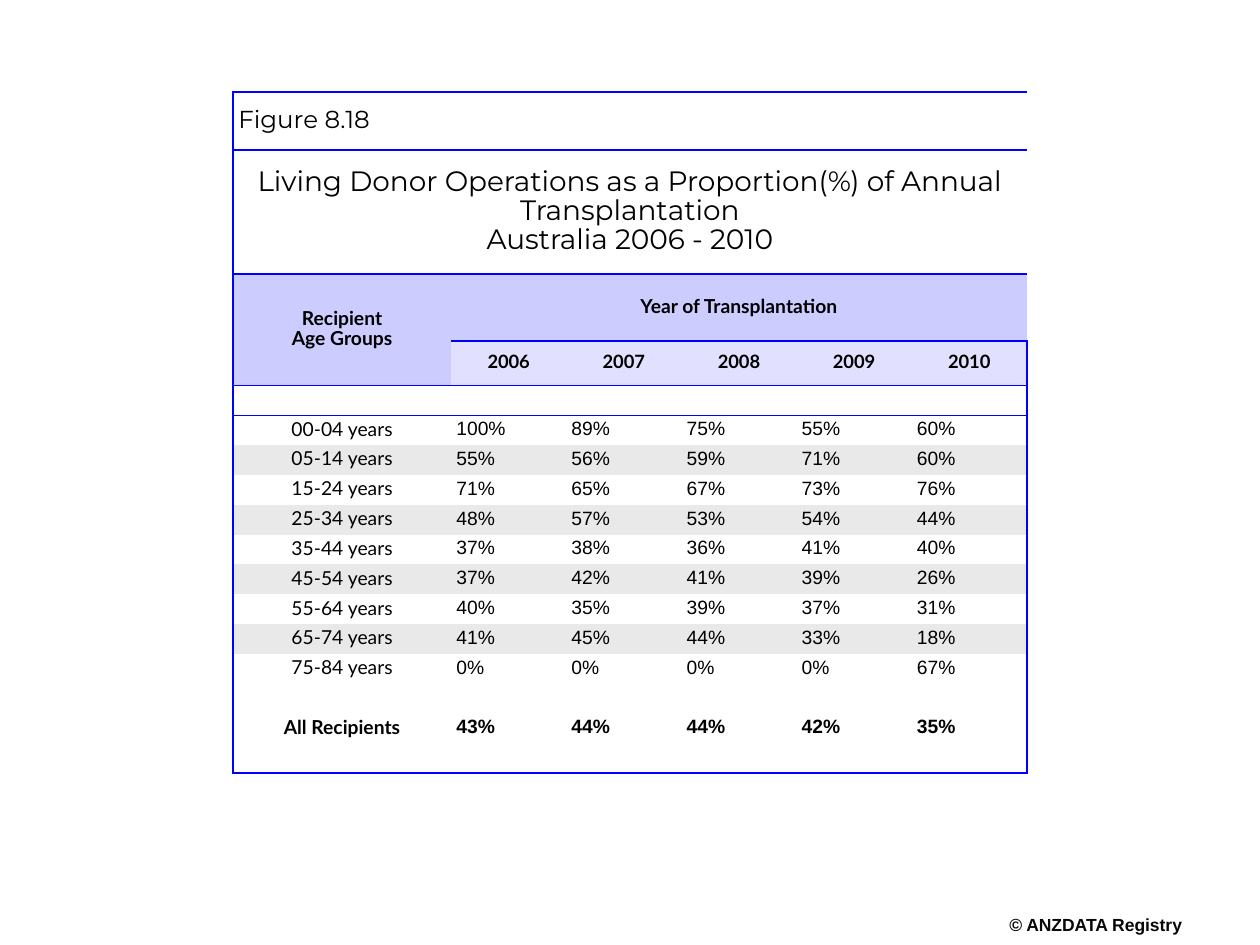
from dataclasses import dataclass

import pptx
import pptx.dml.color
import pptx.enum.text
import pptx.oxml.ns
import pptx.util
from lxml import etree

Pt = pptx.util.Pt
RGB = pptx.dml.color.RGBColor.from_string
qn = pptx.oxml.ns.qn
ALIGN = pptx.enum.text.PP_ALIGN
ANCHOR = pptx.enum.text.MSO_ANCHOR


@dataclass(frozen=True)
class Theme:
    ink: str = "000000"
    credit_ink: str = "080808"
    rule: str = "0000FF"
    header: str = "CCCCFF"
    years: str = "E1E1FF"
    stripe: str = "E9E9E9"
    title_font: str = "Montserrat"
    label_font: str = "Lato"
    value_font: str = "Arial"
    figure_size: float = 14
    title_size: float = 16
    body_size: float = 11
    year_size: float = 10.5
    credit_size: float = 10
    rule_width: float = 1
    line_spacing: float = 0.85


THEME = Theme()
NO_GRID_STYLE = "{2D5ABB26-0587-4C30-8999-92F81FD0307C}"
YEARS = ["2006", "2007", "2008", "2009", "2010"]
AGE_GROUPS = [
    ("00-04 years", [100, 89, 75, 55, 60]),
    ("05-14 years", [55, 56, 59, 71, 60]),
    ("15-24 years", [71, 65, 67, 73, 76]),
    ("25-34 years", [48, 57, 53, 54, 44]),
    ("35-44 years", [37, 38, 36, 41, 40]),
    ("45-54 years", [37, 42, 41, 39, 26]),
    ("55-64 years", [40, 35, 39, 37, 31]),
    ("65-74 years", [41, 45, 44, 33, 18]),
    ("75-84 years", [0, 0, 0, 0, 67]),
]
ALL_RECIPIENTS = ("All Recipients", [43, 44, 44, 42, 35])
HEADER_HEIGHTS = [33.2, 71, 38.2, 25.4]
FIRST_AGE_ROW = len(HEADER_HEIGHTS) + 1
TOTAL_ROW = FIRST_AGE_ROW + len(AGE_GROUPS) + 1
ROW_COUNT = TOTAL_ROW + 2


def write(frame, lines, font, size, bold=False, align=ALIGN.CENTER, after=0, ink=THEME.ink):
    for index, line in enumerate(lines):
        paragraph = frame.add_paragraph() if index else frame.paragraphs[0]
        paragraph.alignment = align
        paragraph.line_spacing = THEME.line_spacing
        paragraph.space_after = Pt(after)
        run = paragraph.add_run()
        run.text = line
        run.font.name = font
        run.font.size = Pt(size)
        run.font.bold = bold
        run.font.color.rgb = RGB(ink)


def draw_borders(cell, row, column):
    ruled = {
        "L": column == 0,
        "R": column == len(YEARS),
        "T": row <= len(HEADER_HEIGHTS) and (row, column) != (3, 0),
        "B": row < len(HEADER_HEIGHTS) or row == ROW_COUNT - 1,
    }
    properties = cell._tc.get_or_add_tcPr()
    for side, visible in ruled.items():
        if visible:
            line = etree.SubElement(properties, qn(f"a:ln{side}"), w=str(Pt(THEME.rule_width)))
            fill = etree.SubElement(line, qn("a:solidFill"))
            etree.SubElement(fill, qn("a:srgbClr"), val=THEME.rule)


def row_fill(row, column):
    if row == 2 or (row, column) == (3, 0):
        return THEME.header
    if row == 3:
        return THEME.years
    if FIRST_AGE_ROW <= row < TOTAL_ROW - 1 and (row - FIRST_AGE_ROW) % 2:
        return THEME.stripe
    return None


def format_cell(cell, row, column):
    cell.vertical_anchor = ANCHOR.MIDDLE
    cell.margin_left = cell.margin_right = Pt(3)
    cell.margin_top = cell.margin_bottom = Pt(3 if row < 2 else 1.5)
    draw_borders(cell, row, column)
    color = row_fill(row, column)
    if color:
        cell.fill.solid()
        cell.fill.fore_color.rgb = RGB(color)
    else:
        cell.fill.background()
    if not cell.text_frame.text:
        end = etree.SubElement(cell.text_frame.paragraphs[0]._p, qn("a:endParaRPr"))
        end.set("sz", str(THEME.body_size * 100))


def write_values(table, row, label, values, bold=False):
    write(table.cell(row, 0).text_frame, [label], THEME.label_font, THEME.body_size, bold)
    for column, value in enumerate(values, 1):
        write(table.cell(row, column).text_frame, [f"{value}%"], THEME.value_font,
              THEME.body_size, bold, ALIGN.LEFT, after=14)


def write_headers(table):
    last = len(YEARS)
    for start, end in [((0, 0), (0, last)), ((1, 0), (1, last)),
                       ((2, 0), (3, 0)), ((2, 1), (2, last))]:
        table.cell(*start).merge(table.cell(*end))
    write(table.cell(0, 0).text_frame, ["Figure 8.18"], THEME.title_font,
          THEME.figure_size, align=ALIGN.LEFT)
    write(table.cell(1, 0).text_frame,
          ["Living Donor Operations as a Proportion(%) of Annual Transplantation",
           "Australia 2006 - 2010"], THEME.title_font, THEME.title_size)
    write(table.cell(2, 0).text_frame, ["Recipient", "Age Groups"],
          THEME.label_font, THEME.body_size, True)
    write(table.cell(2, 1).text_frame, ["Year of Transplantation"],
          THEME.label_font, THEME.body_size, True)
    for column, year in enumerate(YEARS, 1):
        write(table.cell(3, column).text_frame, [year], THEME.label_font, THEME.year_size, True)


def add_donor_table(slide, left, top, width, height):
    table = slide.shapes.add_table(ROW_COUNT, len(YEARS) + 1, Pt(left), Pt(top),
                                   Pt(width), Pt(height)).table
    table.first_row = table.horz_banding = False
    table._tbl.tblPr.find(qn("a:tableStyleId")).text = NO_GRID_STYLE
    label_width = 124.6
    for index, column in enumerate(table.columns):
        column.width = Pt((width - label_width) / len(YEARS) if index else label_width)
    body_height = (height - sum(HEADER_HEIGHTS)) / (ROW_COUNT - len(HEADER_HEIGHTS))
    for index, row in enumerate(table.rows):
        row.height = Pt(HEADER_HEIGHTS[index] if index < len(HEADER_HEIGHTS) else body_height)

    write_headers(table)
    for row, (ages, values) in enumerate(AGE_GROUPS, FIRST_AGE_ROW):
        write_values(table, row, ages, values)
    write_values(table, TOTAL_ROW, *ALL_RECIPIENTS, bold=True)
    for row in range(ROW_COUNT):
        for column in range(len(YEARS) + 1):
            format_cell(table.cell(row, column), row, column)


def add_credit(slide, left, top, width, height):
    frame = slide.shapes.add_textbox(Pt(left), Pt(top), Pt(width), Pt(height)).text_frame
    frame.margin_left = frame.margin_right = frame.margin_top = frame.margin_bottom = 0
    frame.word_wrap = False
    write(frame, ["© ANZDATA Registry"], THEME.value_font, THEME.credit_size, True,
          ink=THEME.credit_ink)


def main():
    presentation = pptx.Presentation()
    presentation.slide_width, presentation.slide_height = Pt(720), Pt(540)
    slide = presentation.slides.add_slide(presentation.slide_layouts[6])
    add_donor_table(slide, 133.2, 52.5, 453.6, 389.4)
    add_credit(slide, 575.3, 524.2, 101.5, 12.2)
    presentation.save("out.pptx")


if __name__ == "__main__":
    main()
